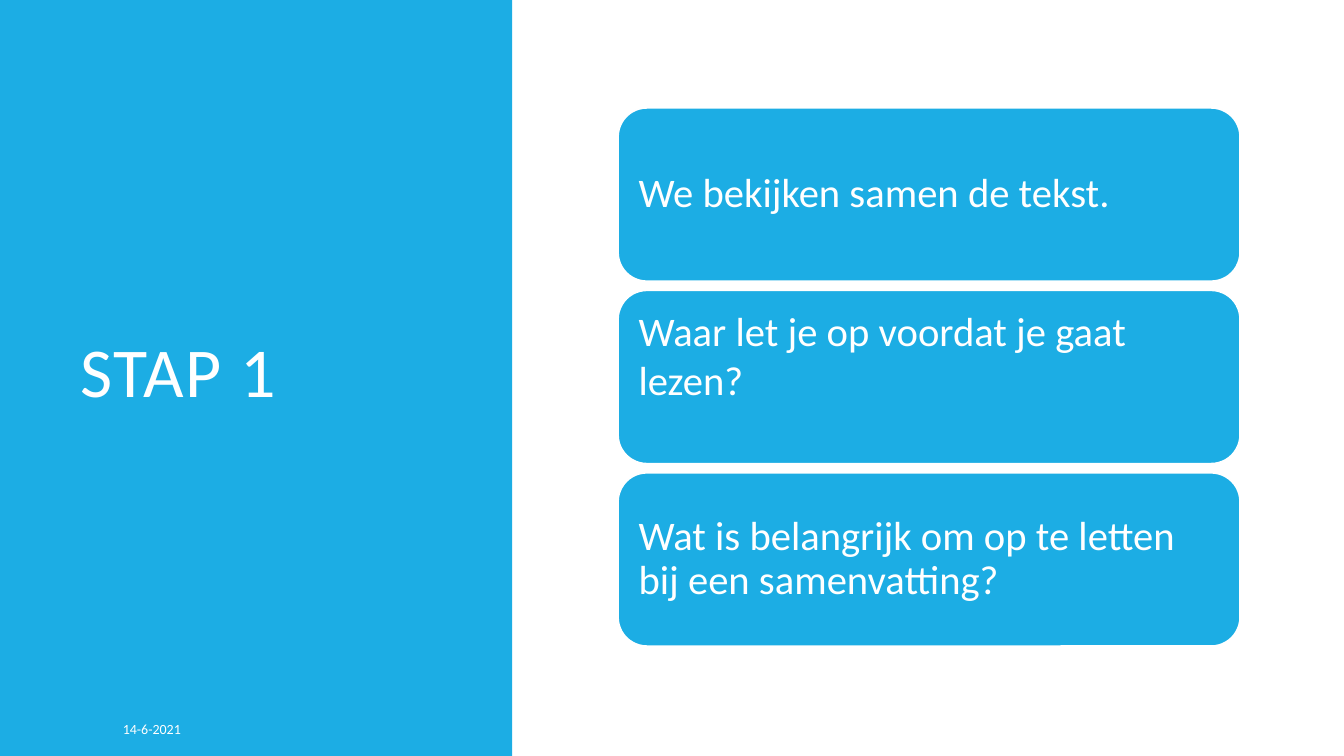
"""Build the "STAP 1" slide: a title panel beside three stacked cards."""
from dataclasses import dataclass

from pptx import Presentation
from pptx import util as u
from pptx.dml.color import RGBColor
from pptx.enum import shapes, text


@dataclass(frozen=True)
class Theme:
    font: str = "Calibri"
    blue: RGBColor = RGBColor(0x1C, 0xAD, 0xE4)
    white: RGBColor = RGBColor(0xFF, 0xFF, 0xFF)
    title_size: int = 50
    card_size: int = 29
    date_size: int = 10


theme = Theme()


def add_block(slide, kind, left, top, width, height):
    shape = slide.shapes.add_shape(
        kind, u.Inches(left), u.Inches(top), u.Inches(width), u.Inches(height))
    shape.shadow.inherit = False
    shape.fill.solid()
    shape.fill.fore_color.rgb = theme.blue
    return shape


def write(shape, content, size, spacing=1.0):
    frame = shape.text_frame
    frame.text = content
    frame.word_wrap = True
    frame.auto_size = text.MSO_AUTO_SIZE.NONE
    frame.vertical_anchor = text.MSO_ANCHOR.MIDDLE
    paragraph = frame.paragraphs[0]
    paragraph.alignment = text.PP_ALIGN.LEFT
    paragraph.line_spacing = spacing
    font = paragraph.runs[0].font
    font.name, font.size = theme.font, u.Pt(size)
    font.color.rgb = theme.white
    return frame


presentation = Presentation()
presentation.slide_width = u.Inches(13.33)
presentation.slide_height = u.Inches(7.5)
slide = presentation.slides.add_slide(presentation.slide_layouts[5])

panel = add_block(slide, shapes.MSO_SHAPE.RECTANGLE, 0, 0, 5.08, 7.5)
panel.line.fill.background()

title = slide.shapes.title
title.element.addprevious(panel.element)
title.left, title.top = u.Inches(0.7), u.Inches(0.7)
title.width, title.height = u.Inches(3.74), u.Inches(6.09)
title_frame = write(title, "STAP 1", theme.title_size, spacing=0.8)
title_frame.paragraphs[0].runs[0].font._element.set("spc", "100")

date = slide.shapes.add_textbox(
    u.Inches(1.12), u.Inches(7.08), u.Inches(2.36), u.Inches(0.3))
write(date, "14-6-2021", theme.date_size)

card_left, first_top, card_width, card_height, card_pitch = 6.13, 1.07, 6.17, 1.72, 1.81
inset = 0.12
cards = [
    ("We bekijken samen de tekst.", 0.9, inset),
    ("Waar let je op voordat je gaat lezen?", 1.0, inset + 0.44),
    ("Wat is belangrijk om op te letten bij een samenvatting?", 0.9, inset),
]
for row, (content, spacing, bottom_inset) in enumerate(cards):
    card = add_block(slide, shapes.MSO_SHAPE.ROUNDED_RECTANGLE,
                     card_left, first_top + row * card_pitch, card_width, card_height)
    card.line.color.rgb = theme.white
    card.line.width = u.Pt(1.25)
    frame = write(card, content, theme.card_size, spacing)
    frame.margin_left = frame.margin_right = frame.margin_top = u.Inches(inset)
    frame.margin_bottom = u.Inches(bottom_inset)

presentation.save("out.pptx")
